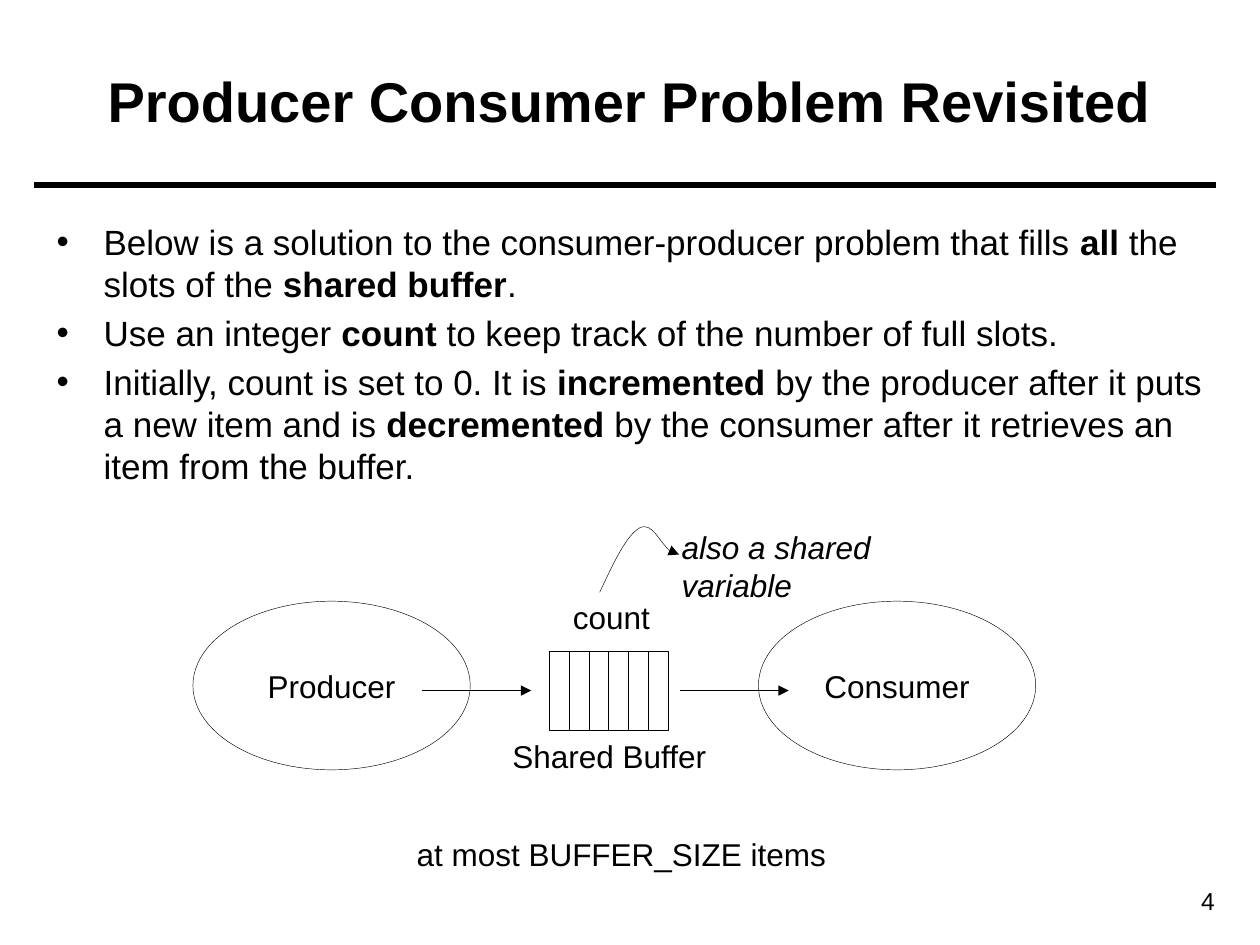
from lxml import etree
from pptx import Presentation
from pptx.dml.color import RGBColor
from pptx.enum.shapes import MSO_CONNECTOR, MSO_SHAPE
from pptx.enum.text import MSO_ANCHOR, PP_ALIGN
from pptx.oxml.ns import qn
from pptx.util import Cm, Pt

STRAIGHT = MSO_CONNECTOR.STRAIGHT
RECT, OVAL = MSO_SHAPE.RECTANGLE, MSO_SHAPE.OVAL
TOP, MIDDLE = MSO_ANCHOR.TOP, MSO_ANCHOR.MIDDLE
LEFT, CENTER, RIGHT = PP_ALIGN.LEFT, PP_ALIGN.CENTER, PP_ALIGN.RIGHT

COLORS = {"ink": "000000"}
FONT = "Arial"
HAIRLINE = 0.25

BULLETS = [
    [("Below is a solution to the consumer-producer problem that fills ", False),
     ("all ", True), ("the slots of the ", False), ("shared buffer", True), (".", False)],
    [("Use an integer ", False), ("count", True),
     (" to keep track of the number of full slots.", False)],
    [("Initially, count is set to 0. It is ", False), ("incremented", True),
     (" by the producer after it puts a new item and is ", False), ("decremented", True),
     (" by the consumer after it retrieves an item from the buffer.", False)],
]


def add_run(p, text, size, **formats):
    r = p.add_run()
    r.text = text
    for name, value in {"name": FONT, "size": Pt(size), **formats}.items():
        setattr(r.font, name, value)
    r.font.color.rgb = RGBColor.from_string(COLORS["ink"])


def add_text(s, box, text, size, align=LEFT, anchor=TOP, wrap=True, **formats):
    tf = s.shapes.add_textbox(*map(Cm, box)).text_frame
    tf.word_wrap, tf.vertical_anchor = wrap, anchor
    p = tf.paragraphs[0]
    p.alignment = align
    add_run(p, text, size, **formats)


def style_line(sp, width):
    sp.line.color.rgb = RGBColor.from_string(COLORS["ink"])
    sp.line.width = Pt(width)


def add_arrowhead(sp):
    etree.SubElement(sp.line._get_or_add_ln(), qn("a:tailEnd"), type="triangle")


def add_line(s, x1, x2, y, width):
    sp = s.shapes.add_connector(STRAIGHT, Cm(x1), Cm(y), Cm(x2), Cm(y))
    style_line(sp, width)
    etree.SubElement(sp._element.spPr, qn("a:effectLst"))
    return sp


def add_outline(s, kind, box):
    sp = s.shapes.add_shape(kind, *map(Cm, box))
    sp.shadow.inherit = False
    sp.fill.background()
    style_line(sp, HAIRLINE)
    return sp


def add_curve(s, points):
    start, *rest = [(Cm(x), Cm(y)) for x, y in points]
    builder = s.shapes.build_freeform(*start)
    builder.add_line_segments(rest, close=False)
    sp = builder.convert_to_shape()
    sp.shadow.inherit = False
    sp.fill.background()
    style_line(sp, HAIRLINE)
    add_arrowhead(sp)
    path = next(sp._element.iter(qn("a:path")))
    segments = path.findall(qn("a:lnTo"))
    for i in range(0, len(segments), 3):
        bezier = etree.SubElement(path, qn("a:cubicBezTo"))
        for segment in segments[i:i + 3]:
            bezier.append(segment[0])
            path.remove(segment)


def add_header(s, x, y, w, h):
    add_line(s, x - 0.2, x + w + 0.02, y + h + 0.12, 3)
    add_text(s, (x, y, w, h), "Producer Consumer Problem Revisited", 32,
             CENTER, MIDDLE, bold=True)


def add_body(s, x, y, w, h):
    tf = s.shapes.add_textbox(Cm(x), Cm(y), Cm(w), Cm(h)).text_frame
    tf.word_wrap = True
    for i, runs in enumerate(BULLETS):
        p = tf.add_paragraph() if i else tf.paragraphs[0]
        p.space_before = Pt(4)
        pPr = p._p.get_or_add_pPr()
        pPr.set("marL", str(Cm(0.95)))
        pPr.set("indent", str(-Cm(0.95)))
        etree.SubElement(pPr, qn("a:buFont"), typeface=FONT)
        etree.SubElement(pPr, qn("a:buChar"), char="•")
        for text, bold in runs:
            add_run(p, text, 20, bold=bold)


def add_diagram(s, x, y):
    slot_w, slot_h = 0.4, 1.6
    for i in range(6):
        add_outline(s, RECT, (x + 7.18 + i * slot_w, y + 2.61, slot_w, slot_h))

    for dx, name in ((0, "Producer"), (11.4, "Consumer")):
        tf = add_outline(s, OVAL, (x + dx, y + 1.6, 5.59, 3.4)).text_frame
        tf.word_wrap, tf.vertical_anchor = False, MIDDLE
        p = tf.paragraphs[0]
        p.alignment = CENTER
        add_run(p, name, 18)

    for dx in (4.62, 9.81):
        add_arrowhead(add_line(s, x + dx, x + dx + 2.2, y + 3.4, HAIRLINE))

    curve = [(8.2, 1.42), (8.48, 0.83), (8.73, 0.28), (9.01, 0.12),
             (9.27, 0), (9.5, 0.66), (9.8, 0.66)]
    add_curve(s, [(x + dx, y + dy) for dx, dy in curve])

    labels = [("Shared Buffer", 6.19, 4.21, 4.42, False),
              ("count", 7.41, 1.42, 2.06, False),
              ("also a shared variable", 9.6, 0, 6.71, True),
              ("at most BUFFER_SIZE items", 4.26, 6.19, 8.76, False)]
    for text, dx, dy, w, italic in labels:
        add_text(s, (x + dx, y + dy, w, 1.02), text, 18, wrap=False, italic=italic)


def main():
    prs = Presentation()
    prs.slide_width, prs.slide_height = Cm(25.4), Cm(19.05)
    s = prs.slides.add_slide(prs.slide_layouts[6])
    add_header(s, 0.89, 0.43, 23.6, 3.18)
    add_body(s, 0.89, 4.32, 23.6, 13)
    add_diagram(s, 3.89, 10.52)
    add_text(s, (22.1, 17.73, 2.64, 0.86), "4", 14, RIGHT)
    prs.save("out.pptx")


if __name__ == "__main__":
    main()
